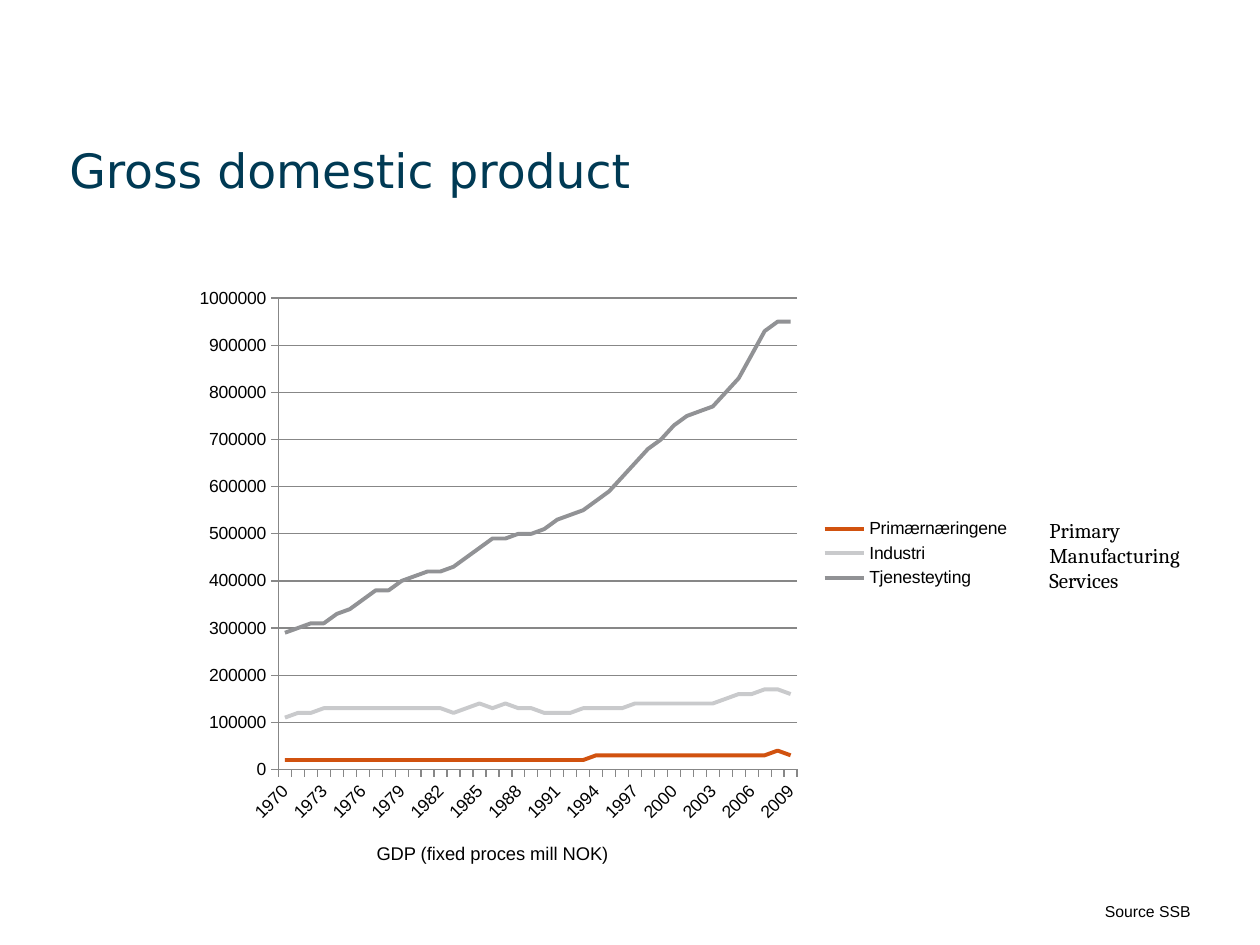
import pptx
import pptx.chart.data
import pptx.dml.color
import pptx.enum.chart
import pptx.enum.text
import pptx.oxml
import pptx.oxml.ns
import pptx.util

WIDTH, HEIGHT = 10, 7.5
COLORS = {
    "title": "003A54",
    "text": "000000",
    "axis": "878787",
    "Primærnæringene": "D1520F",
    "Industri": "C9CACC",
    "Tjenesteyting": "919295",
}
YEARS = [str(year) for year in range(1970, 2010)]
UNIT = 10000
GDP = {  # in units of 10 000 mill NOK
    "Primærnæringene": [2] * 24 + [3] * 14 + [4, 3],
    "Industri": [11, 12, 12] + [13] * 10 + [12, 13, 14, 13, 14, 13, 13]
    + [12] * 3 + [13] * 4 + [14] * 7 + [15, 16, 16, 17, 17, 16],
    "Tjenesteyting": [
        29, 30, 31, 31, 33, 34, 36, 38, 38, 40, 41, 42, 42, 43, 45, 47, 49, 49, 50, 50,
        51, 53, 54, 55, 57, 59, 62, 65, 68, 70, 73, 75, 76, 77, 80, 83, 88, 93, 95, 95],
}


def rgb(name):
    return pptx.dml.color.RGBColor.from_string(COLORS[name])


def box(x, y, w, h):
    """Turn shares of the slide's size into lengths."""
    return [pptx.util.Inches(n) for n in (x * WIDTH, y * HEIGHT, w * WIDTH, h * HEIGHT)]


def set_font(font, name, size, color):
    font.name = name
    font.size = pptx.util.Pt(size)
    font.color.rgb = rgb(color)


def add_text(slide, place, lines, font, size, color="text", inset=None, bottom=False):
    tf = slide.shapes.add_textbox(*box(*place)).text_frame
    tf.word_wrap = inset is not None
    if inset is not None:
        tf.margin_left = tf.margin_right = tf.margin_top = tf.margin_bottom = inset
    if bottom:
        tf.vertical_anchor = pptx.enum.text.MSO_ANCHOR.BOTTOM
    tf.text = "\n".join(lines)
    for p in tf.paragraphs:
        set_font(p.font, font, size, color)


def style_axis(axis):
    axis.major_tick_mark = pptx.enum.chart.XL_TICK_MARK.OUTSIDE
    axis.format.line.color.rgb = rgb("axis")
    axis.format.line.width = pptx.util.Pt(0.75)


def set_plot_layout(chart, **shares):
    """Fix the inner plot area as shares of the chart's size."""
    plot_area = chart._chartSpace.chart.plotArea
    for old in plot_area.findall(pptx.oxml.ns.qn("c:layout")):
        plot_area.remove(old)
    values = "".join(f'<c:{key} val="{val}"/>' for key, val in shares.items())
    plot_area.insert(0, pptx.oxml.parse_xml(
        f'<c:layout {pptx.oxml.ns.nsdecls("c")}><c:manualLayout>'
        '<c:layoutTarget val="inner"/><c:xMode val="edge"/><c:yMode val="edge"/>'
        f"{values}</c:manualLayout></c:layout>"))


def label_every(axis, step):
    skip = pptx.oxml.parse_xml(
        f'<c:tickLblSkip {pptx.oxml.ns.nsdecls("c")} val="{step}"/>')
    axis._element.find(pptx.oxml.ns.qn("c:noMultiLvlLbl")).addprevious(skip)


def add_gdp_chart(slide, place):
    data = pptx.chart.data.CategoryChartData(number_format="0")
    data.categories = YEARS
    for name, values in GDP.items():
        data.add_series(name, [value * UNIT for value in values])
    chart = slide.shapes.add_chart(
        pptx.enum.chart.XL_CHART_TYPE.LINE, *box(*place), data).chart
    set_font(chart.font, "Arial", 10, "text")
    chart.has_title = False
    chart.has_legend = True
    chart.legend.position = pptx.enum.chart.XL_LEGEND_POSITION.RIGHT
    chart.legend.include_in_layout = False
    chart.plots[0].vary_by_categories = False
    for series in chart.plots[0].series:
        series.smooth = False
        series.marker.style = pptx.enum.chart.XL_MARKER_STYLE.NONE
        series.format.line.color.rgb = rgb(series.name)
        series.format.line.width = pptx.util.Pt(2.25)

    years, amounts = chart.category_axis, chart.value_axis
    style_axis(years)
    style_axis(amounts)
    set_font(years.tick_labels.font, "Arial", 10, "text")
    years._element.txPr.bodyPr.set("rot", "-2700000")
    label_every(years, 3)
    amounts.minimum_scale, amounts.maximum_scale = 0, 100 * UNIT
    amounts.major_unit = 10 * UNIT
    amounts.has_major_gridlines = True
    amounts.major_gridlines.format.line.color.rgb = rgb("axis")
    amounts.major_gridlines.format.line.width = pptx.util.Pt(0.75)
    set_plot_layout(chart, x=0.11, y=0.04, w=0.62, h=0.85)


def main():
    prs = pptx.Presentation()
    prs.slide_width = pptx.util.Inches(WIDTH)
    prs.slide_height = pptx.util.Inches(HEIGHT)
    slide = prs.slides.add_slide(prs.slide_layouts[6])
    add_text(slide, (0.055, 0.136, 0.918, 0.073), ["Gross domestic product"],
             "DejaVu Sans", 27, "title", inset=0, bottom=True)
    add_text(slide, (0.867, 0.948, 0.094, 0.033), ["Source SSB"], "Arial", 9)
    add_gdp_chart(slide, (0.148, 0.292, 0.664, 0.587))
    add_text(slide, (0.289, 0.885, 0.23, 0.037), ["GDP (fixed proces mill NOK)"],
             "Arial", 10.5)
    add_text(slide, (0.823, 0.541, 0.131, 0.095),
             ["Primary", "Manufacturing", "Services"], "Cambria", 12)
    prs.save("out.pptx")


if __name__ == "__main__":
    main()
